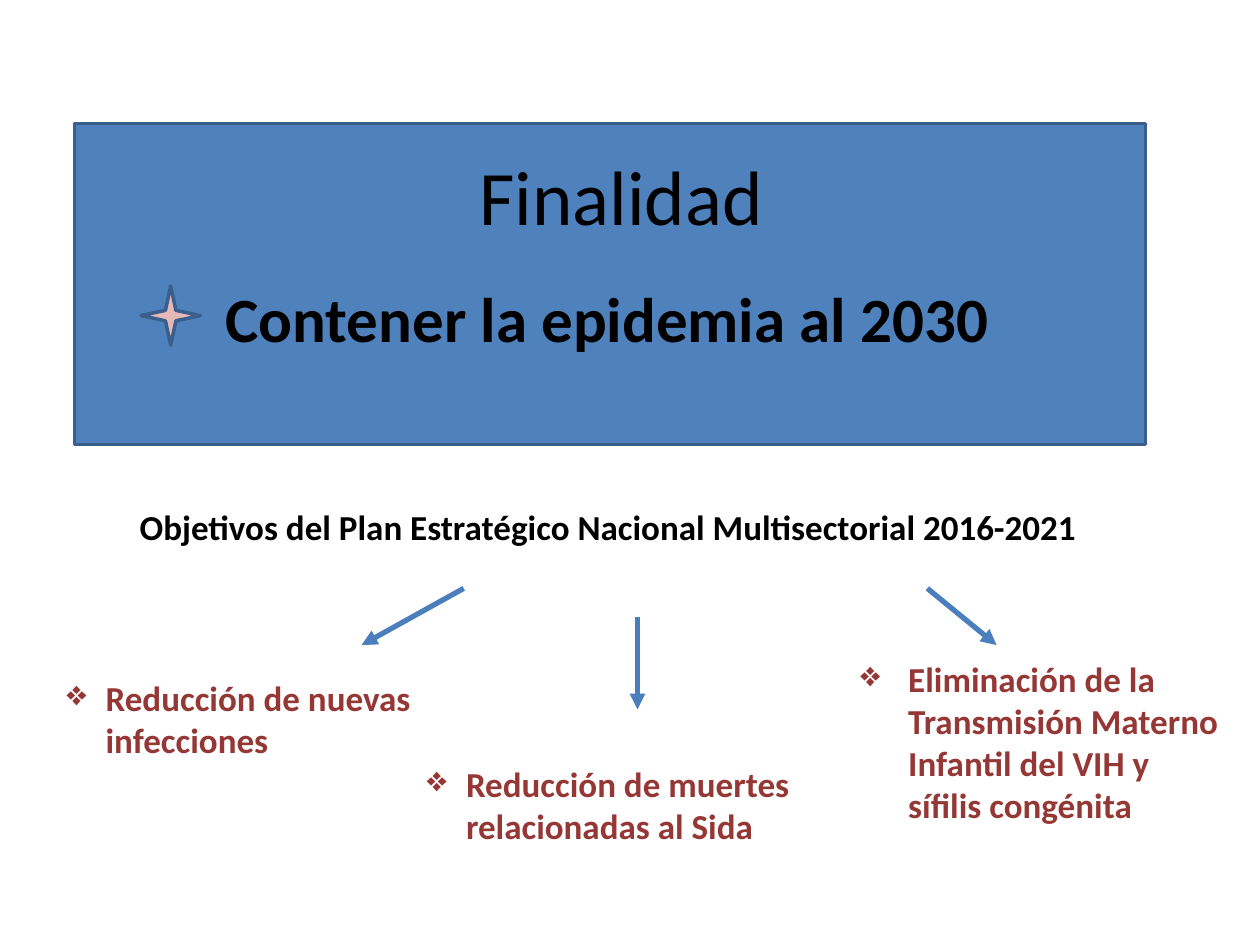
from dataclasses import dataclass

from lxml.etree import SubElement
from pptx import Presentation
from pptx.dml.color import RGBColor as Rgb
from pptx.enum.shapes import MSO_CONNECTOR as Link, MSO_SHAPE as Shape
from pptx.enum.text import MSO_ANCHOR as Anchor, PP_ALIGN as Align
from pptx.oxml.ns import qn
from pptx.util import Inches, Pt


@dataclass(frozen=True)
class Theme:
    """Colours, font and type sizes of the slide."""
    font: str = "Calibri"
    ink: str = "000000"
    panel: str = "4F81BD"
    edge: str = "3A5F8C"
    star: str = "E6B9B8"
    goal: str = "953735"
    arrow: str = "4B7EBC"
    title: int = 44
    aim: int = 36
    body: int = 20


THEME = Theme()


def add_form(slide, kind, box, fill):
    """Draw an outlined preset shape in the box."""
    form = slide.shapes.add_shape(kind, *map(Inches, box))
    form.shadow.inherit = False
    form.fill.solid()
    form.fill.fore_color.rgb = Rgb.from_string(fill)
    form.line.color.rgb = Rgb.from_string(THEME.edge)
    form.line.width = Pt(2)


def add_text(slide, box, text, size, color=THEME.ink, bold=True):
    """Place one paragraph in the box and return its frame and paragraph."""
    frame = slide.shapes.add_textbox(*map(Inches, box)).text_frame
    frame.word_wrap = True
    para = frame.paragraphs[0]
    run = para.add_run()
    run.text = text
    font = run.font
    font.name, font.size, font.bold = THEME.font, Pt(size), bold
    font.color.rgb = Rgb.from_string(color)
    return frame, para


def add_banner(slide, box):
    """Draw the panel with its heading, star and main aim."""
    left, top, width, height = box
    add_form(slide, Shape.RECTANGLE, box, THEME.panel)
    frame, para = add_text(slide, (left - 0.16, top - 0.06, 9, 1.25),
                           "Finalidad", THEME.title, bold=False)
    frame.vertical_anchor = Anchor.MIDDLE
    para.alignment = Align.CENTER
    add_text(slide, (left + 1.1, top + 1.19, 6.38, 0.71),
             "Contener la epidemia al 2030", THEME.aim)
    add_form(slide, Shape.STAR_4_POINT,
             (left + 0.53, top + 1.29, 0.47, 0.47), THEME.star)


def add_goal(slide, box, text, indent):
    """Write one bulleted goal with a hanging indent."""
    para = add_text(slide, box, text, THEME.body, THEME.goal)[1]
    props = para._p.get_or_add_pPr()
    props.set("marL", str(Inches(indent)))
    props.set("indent", str(-Inches(indent)))
    SubElement(props, qn("a:buChar"), char="❖")


def add_arrow(slide, start, end):
    """Draw an arrow from start to end."""
    arrow = slide.shapes.add_connector(Link.STRAIGHT, *map(Inches, start + end))
    arrow.line.color.rgb = Rgb.from_string(THEME.arrow)
    arrow.line.width = Pt(3)
    props = arrow._element.spPr
    SubElement(props.find(qn("a:ln")), qn("a:tailEnd"), type="triangle")
    SubElement(props, qn("a:effectLst"))


def add_plan(slide, box):
    """Write the plan heading and lead from it to the three goals."""
    left, top, width, height = box
    add_text(slide, (left + 0.58, top, 8.11, 0.44),
             "Objetivos del Plan Estratégico Nacional Multisectorial 2016-2021",
             THEME.body)
    goals = (
        ("Reducción de nuevas infecciones", 0, 1.36, 0.77, 0.31,
         (3.25, 0.71), (2.44, 1.16)),
        ("Reducción de muertes relacionadas al Sida", 2.86, 2.04, 0.77, 0.31,
         (4.63, 0.94), (4.63, 1.67)),
        ("Eliminación de la Transmisión Materno Infantil del VIH y sífilis congénita",
         6.3, 1.21, 1.45, 0.38, (6.93, 0.71), (7.48, 1.16)),
    )
    for text, x, y, tall, indent, start, end in goals:
        add_goal(slide, (left + x, top + y, 3.09, tall), text, indent)
        add_arrow(slide, *((left + a, top + b) for a, b in (start, end)))


def main():
    """Build the slide and save it."""
    deck = Presentation()
    deck.slide_width, deck.slide_height = Inches(10), Inches(7.5)
    slide = deck.slides.add_slide(deck.slide_layouts[6])
    add_banner(slide, (0.59, 0.98, 8.5, 2.55))
    add_plan(slide, (0.43, 3.96, 9.39, 2.81))
    deck.save("out.pptx")


if __name__ == "__main__":
    main()
